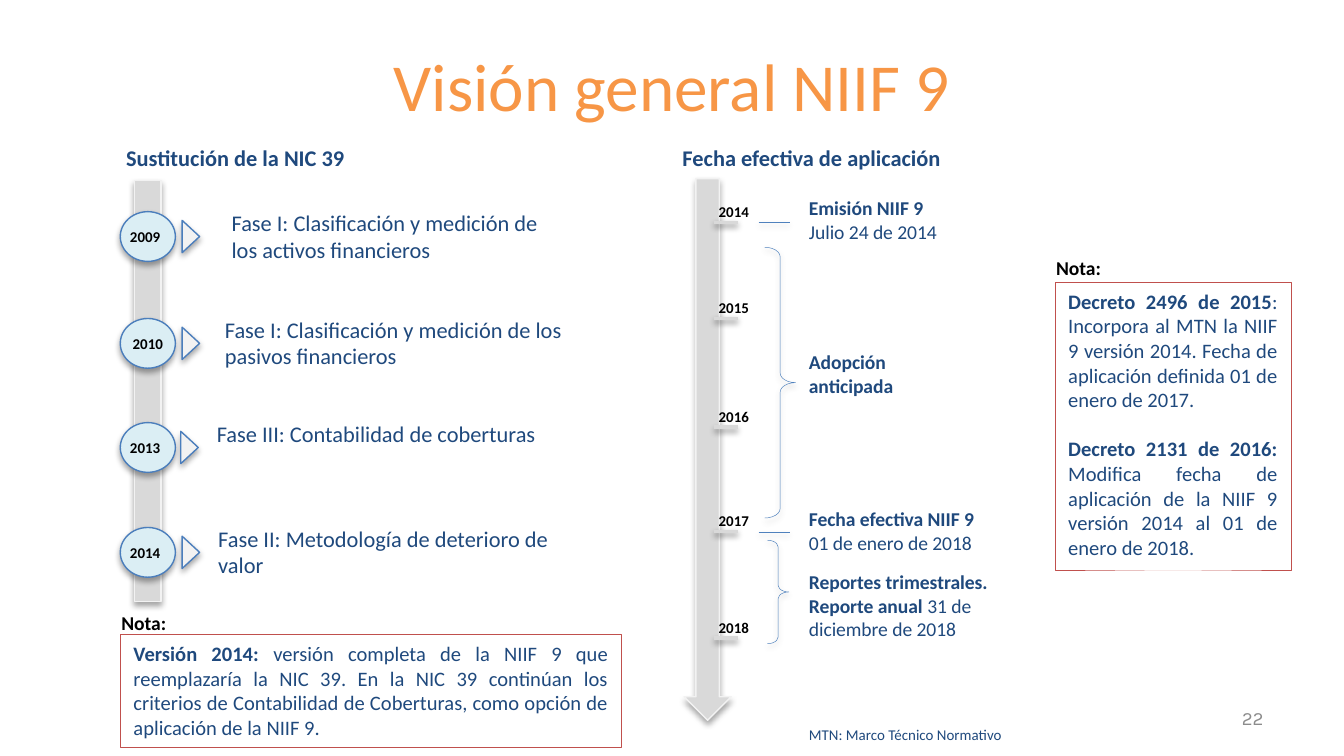
from dataclasses import dataclass

from lxml.etree import SubElement
from pptx import Presentation
from pptx.dml.color import RGBColor
from pptx.enum.shapes import MSO_CONNECTOR, MSO_SHAPE
from pptx.enum.text import MSO_ANCHOR, PP_ALIGN
from pptx.oxml.ns import qn
from pptx.util import Emu, Pt


@dataclass(frozen=True)
class Theme:
    font: str = "Calibri"
    number_font: str = "Karla"
    title: str = "F79646"
    navy: str = "1F497D"
    black: str = "000000"
    white: str = "FFFFFF"
    bar: str = "D9D9D9"
    pale: str = "F2F2F2"
    bubble: str = "DBEEF4"
    outline: str = "4B7EBC"
    rule: str = "4F81BD"
    note: str = "C0504D"
    muted: str = "8C8C8C"
    title_size: float = 36
    heading_size: float = 12
    note_size: float = 11
    event_size: float = 10.5
    number_size: float = 10
    small_size: float = 8


T = Theme()
SCALE = 4572


def px(n):
    return Emu(n * SCALE)


def rgb(value):
    return RGBColor.from_string(value)


def add_shadow(sp, alpha=35, dist=23000):
    effects = SubElement(sp._element.spPr, qn("a:effectLst"))
    outer = SubElement(effects, qn("a:outerShdw"), blurRad="40000", dist=str(dist),
                       dir="5400000", rotWithShape="0")
    color = SubElement(outer, qn("a:srgbClr"), val=T.black)
    SubElement(color, qn("a:alpha"), val=str(alpha * 1000))


def write(tf, paragraphs, size, color=T.navy, align=PP_ALIGN.LEFT, font=T.font, gap=0):
    for i, runs in enumerate(paragraphs):
        p = tf.add_paragraph() if i else tf.paragraphs[0]
        p.alignment = align
        if i:
            p.space_before = Pt(gap)
        for text, bold in runs:
            r = p.add_run()
            r.text = text
            r.font.name, r.font.size, r.font.bold = font, Pt(size), bold
            r.font.color.rgb = rgb(color)


def add_text(s, x, y, w, h, paragraphs, size, wrap=False, **style):
    tf = s.shapes.add_textbox(px(x), px(y), px(w), px(h)).text_frame
    tf.word_wrap = wrap
    write(tf, paragraphs, size, **style)


def add_label(s, x, y, w, h, text, size, bold=True, **style):
    add_text(s, x, y, w, h, [[(text, bold)]], size, **style)


def add_year(s, x, y, year):
    add_label(s, x, y, 90, 48, year, T.small_size, color=T.black, align=PP_ALIGN.CENTER)


def add_form(s, kind, x, y, w, h, fill, line, weight=0.75):
    sp = s.shapes.add_shape(kind, px(x), px(y), px(w), px(h))
    if fill:
        sp.fill.solid()
        sp.fill.fore_color.rgb = rgb(fill)
    else:
        sp.fill.background()
    sp.line.color.rgb = rgb(line)
    sp.line.width = Pt(weight)
    return sp


def add_rule(s, x, y, w, color, weight):
    c = s.shapes.add_connector(MSO_CONNECTOR.STRAIGHT, px(x), px(y), px(x + w), px(y))
    c.line.color.rgb = rgb(color)
    c.line.width = Pt(weight)
    add_shadow(c, 38, 20000)


def add_brace(s, x, y, w, h):
    sp = add_form(s, MSO_SHAPE.RIGHT_BRACE, x, y, w, h, None, T.rule, 0.25)
    sp.adjustments[0] = 0.31
    add_shadow(sp, 38, 20000)


def add_note(s, x, y, w, h, label_y, paragraphs):
    sp = add_form(s, MSO_SHAPE.RECTANGLE, x, y, w, h, T.white, T.note, 0.25)
    sp.shadow.inherit = False
    tf = sp.text_frame
    tf.word_wrap = True
    tf.vertical_anchor = MSO_ANCHOR.TOP
    write(tf, paragraphs, T.note_size, align=PP_ALIGN.JUSTIFY, gap=13)
    add_label(s, x - 18, label_y, 120, 58, "Nota:", T.event_size, color=T.black)


def add_title(s, x, y, w, h):
    title = s.shapes.title
    title.left, title.top, title.width, title.height = px(x), px(y), px(w), px(h)
    tf = title.text_frame
    tf.vertical_anchor = MSO_ANCHOR.MIDDLE
    write(tf, [[("Visión general NIIF 9", False)]], T.title_size, T.title, PP_ALIGN.CENTER)


def add_phases(s, x, y):
    add_label(s, x - 11, y, 370, 60, "Sustitución de la NIC 39", T.heading_size)
    add_shadow(add_form(s, MSO_SHAPE.RECTANGLE, x + 21, y + 64, 40, 626, T.bar, T.pale))
    phases = [
        (110, 146, 534, "2009", "Fase I: Clasificación y medición de los activos financieros"),
        (269, 136, 554, "2010", "Fase I: Clasificación y medición de los pasivos financieros"),
        (424, 124, 554, "2013", "Fase III: Contabilidad de coberturas"),
        (580, 126, 564, "2014", "Fase II: Metodología de deterioro de valor"),
    ]
    for dy, dx, w, year, text in phases:
        top = y + dy
        add_shadow(add_form(s, MSO_SHAPE.OVAL, x, top, 82, 74, T.bubble, T.outline))
        add_year(s, x - (4 if year == "2010" else 8), top + 14, year)
        arrow = add_form(s, MSO_SHAPE.ISOSCELES_TRIANGLE, x + (79 if year == "2013" else 81),
                         top + 24, 48, 26, T.pale, T.outline)
        arrow.rotation = 90
        add_shadow(arrow)
        add_label(s, x + dx, top - 14, w, 100, text, T.heading_size, bold=False, wrap=True)


def add_timeline(s, x, y):
    add_label(s, x, y, 428, 60, "Fecha efectiva de aplicación", T.heading_size)
    add_shadow(add_form(s, MSO_SHAPE.DOWN_ARROW, x + 22, y + 61, 70, 806, T.bar, T.pale))
    for year, dy in zip(range(2014, 2019), (87, 230, 392, 547, 706)):
        add_rule(s, x + 67, y + dy + 39, 35, T.bar, 2)
        add_year(s, x + 51, y + dy, str(year))
    for dy in (126, 587):
        add_rule(s, x + 133, y + dy, 46, T.rule, 0.25)
    add_brace(s, x + 142, y + 163, 46, 403)
    add_brace(s, x + 146, y + 599, 32, 154)
    events = [
        (77, 90, [[("Emisión NIIF 9", True)], [("Julio 24 de 2014", False)]]),
        (306, 90, [[("Adopción", True)], [("anticipada", True)]]),
        (540, 90, [[("Fecha efectiva NIIF 9", True)], [("01 de enero de 2018", False)]]),
        (634, 126, [[("Reportes trimestrales.", True)],
                    [("Reporte anual ", True), ("31 de diciembre de 2018", False)]]),
    ]
    for dy, h, paragraphs in events:
        add_text(s, x + 188, y + dy, 358, h, paragraphs, T.event_size, wrap=True)
    add_label(s, x + 188, y + 865, 332, 48, "MTN: Marco Técnico Normativo", T.small_size, bold=False)


def main():
    prs = Presentation()
    prs.slide_width, prs.slide_height = px(2000), px(1125)
    s = prs.slides.add_slide(prs.slide_layouts[5])
    add_title(s, 100, 60, 1800, 132)
    add_phases(s, 179, 205)
    add_timeline(s, 996, 205)
    add_note(s, 1570, 420, 351, 428, 371, [
        [("Decreto 2496 de 2015", True),
         (": Incorpora al MTN la NIIF 9 versión 2014. Fecha de aplicación definida "
          "01 de enero de 2017.", False)],
        [("Decreto 2131 de 2016: ", True),
         ("Modifica fecha de aplicación de la NIIF 9 versión 2014 al 01 de enero de 2018.", False)],
    ])
    add_note(s, 179, 944, 746, 168, 900, [
        [("Versión 2014:", True),
         (" versión completa de la NIIF 9 que reemplazaría la NIC 39. En la NIC 39 continúan "
          "los criterios de Contabilidad de Coberturas, como opción de aplicación de la NIIF 9.",
          False)],
    ])
    add_label(s, 1434, 1042, 466, 60, "22", T.number_size, bold=False, color=T.muted,
              align=PP_ALIGN.RIGHT, font=T.number_font)
    prs.save("out.pptx")


if __name__ == "__main__":
    main()
